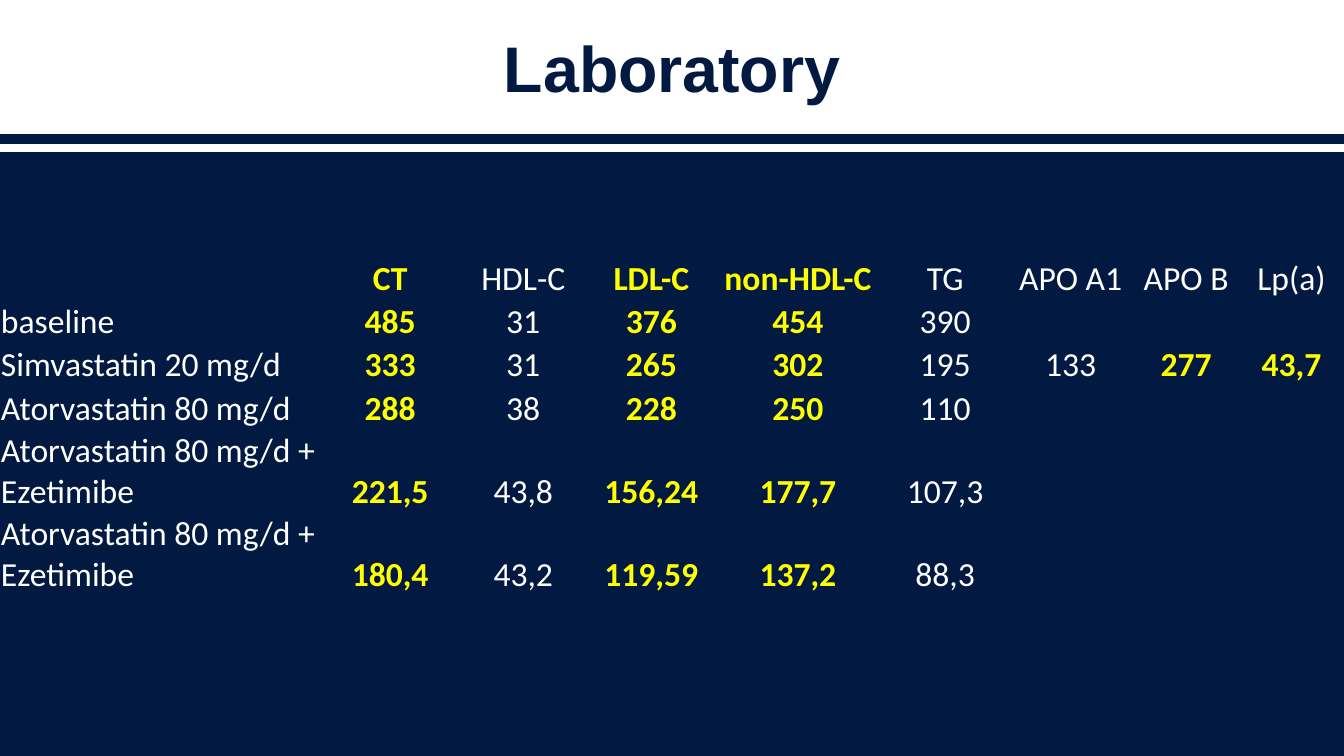
from lxml.etree import SubElement
from pptx import Presentation
from pptx.dml.color import RGBColor
from pptx.enum.shapes import MSO_CONNECTOR, MSO_SHAPE
from pptx.enum.text import MSO_ANCHOR, PP_ALIGN
from pptx.oxml.ns import qn
from pptx.util import Inches, Pt

NAVY, WHITE, YELLOW = "021941", "FFFFFF", "FFFF00"
WIDTH, BANNER_HEIGHT = 13.33, 1.33
NO_STYLE = "{2D5ABB26-0587-4C30-8999-92F81FD0307C}"

COLUMN_WIDTHS = [3.2, 1.34, 1.3, 1.24, 1.67, 1.25, 1.24, 1.05, 1.04]
ROW_HEIGHTS = [0.43] * 4 + [0.82] * 2
LAB_ROWS = [
    ["", "CT", "HDL-C", "LDL-C", "non-HDL-C", "TG", "APO A1", "APO B", "Lp(a)"],
    ["baseline", "485", "31", "376", "454", "390", "", "", ""],
    ["Simvastatin 20 mg/d", "333", "31", "265", "302", "195", "133", "277", "43,7"],
    ["Atorvastatin 80 mg/d", "288", "38", "228", "250", "110", "", "", ""],
    ["Atorvastatin 80 mg/d + Ezetimibe", "221,5", "43,8", "156,24", "177,7", "107,3", "", "", ""],
    ["Atorvastatin 80 mg/d + Ezetimibe", "180,4", "43,2", "119,59", "137,2", "88,3", "", "", ""],
]
HIGHLIGHTED_COLUMNS = {1, 3, 4}
HIGHLIGHTED_VALUE_COLUMNS = {7, 8}


def color(value):
    return RGBColor.from_string(value)


def is_highlighted(row, column):
    return column in HIGHLIGHTED_COLUMNS or (row > 0 and column in HIGHLIGHTED_VALUE_COLUMNS)


class SlideBuilder:
    """Draws styled elements on the current slide."""

    def __init__(self, slide, background):
        self.slide = slide
        self.title_font = "Arial"
        self.table_font = "Calibri"
        slide.background.fill.solid()
        slide.background.fill.fore_color.rgb = color(background)

    def format_text(self, text_frame, font, size, text_color, bold, alignment):
        for paragraph in text_frame.paragraphs:
            paragraph.alignment = alignment
            for run in paragraph.runs:
                run.font.name = font
                run.font.size = Pt(size)
                run.font.bold = bold
                run.font.color.rgb = color(text_color)

    def rectangle(self, left, top, width, height, fill):
        shape = self.slide.shapes.add_shape(
            MSO_SHAPE.RECTANGLE, Inches(left), Inches(top), Inches(width), Inches(height))
        shape.shadow.inherit = False
        shape.fill.solid()
        shape.fill.fore_color.rgb = color(fill)
        shape.line.fill.background()

    def horizontal_line(self, left, top, width, line_color, weight):
        connector = self.slide.shapes.add_connector(
            MSO_CONNECTOR.STRAIGHT, Inches(left), Inches(top), Inches(left + width), Inches(top))
        connector.line.color.rgb = color(line_color)
        connector.line.width = Pt(weight)
        SubElement(connector._element.spPr, qn("a:effectLst"))

    def title(self, text, left, top, width, height):
        shape = self.slide.shapes.add_textbox(
            Inches(left), Inches(top), Inches(width), Inches(height))
        text_frame = shape.text_frame
        text_frame.word_wrap = True
        text_frame.vertical_anchor = MSO_ANCHOR.MIDDLE
        text_frame.margin_left = text_frame.margin_right = Inches(0.2)
        text_frame.margin_top = text_frame.margin_bottom = Inches(0.1)
        text_frame.text = text
        self.format_text(text_frame, self.title_font, 46, NAVY, True, PP_ALIGN.CENTER)

    def table(self, rows, left, top, column_widths, row_heights):
        frame = self.slide.shapes.add_table(
            len(rows), len(column_widths), Inches(left), Inches(top),
            Inches(sum(column_widths)), Inches(sum(row_heights)))
        table = frame.table
        table.first_row = table.horz_banding = False
        table._tbl.tblPr.find(qn("a:tableStyleId")).text = NO_STYLE
        for column, width in zip(table.columns, column_widths):
            column.width = Inches(width)
        for row, height in zip(table.rows, row_heights):
            row.height = Inches(height)
        for row, values in enumerate(rows):
            for column, value in enumerate(values):
                self.cell(table.cell(row, column), value, is_highlighted(row, column),
                          PP_ALIGN.CENTER if column else PP_ALIGN.LEFT)

    def cell(self, cell, value, highlighted, alignment):
        cell.fill.background()
        cell.vertical_anchor = MSO_ANCHOR.BOTTOM
        cell.margin_left = cell.margin_right = cell.margin_top = Inches(0.01)
        cell.margin_bottom = Inches(0)
        cell.text_frame.text = value
        self.format_text(cell.text_frame, self.table_font, 24,
                         YELLOW if highlighted else WHITE, highlighted, alignment)


def main():
    presentation = Presentation()
    presentation.slide_width = Inches(WIDTH)
    presentation.slide_height = Inches(7.5)
    slide = presentation.slides.add_slide(presentation.slide_layouts[6])
    builder = SlideBuilder(slide, NAVY)
    builder.rectangle(0, 0, WIDTH, BANNER_HEIGHT, WHITE)
    builder.horizontal_line(0, 1.47, WIDTH, WHITE, 6)
    builder.table(LAB_ROWS, 0, 2.54, COLUMN_WIDTHS, ROW_HEIGHTS)
    builder.title("Laboratory", 0, 0, WIDTH, BANNER_HEIGHT)
    presentation.save("out.pptx")


if __name__ == "__main__":
    main()
